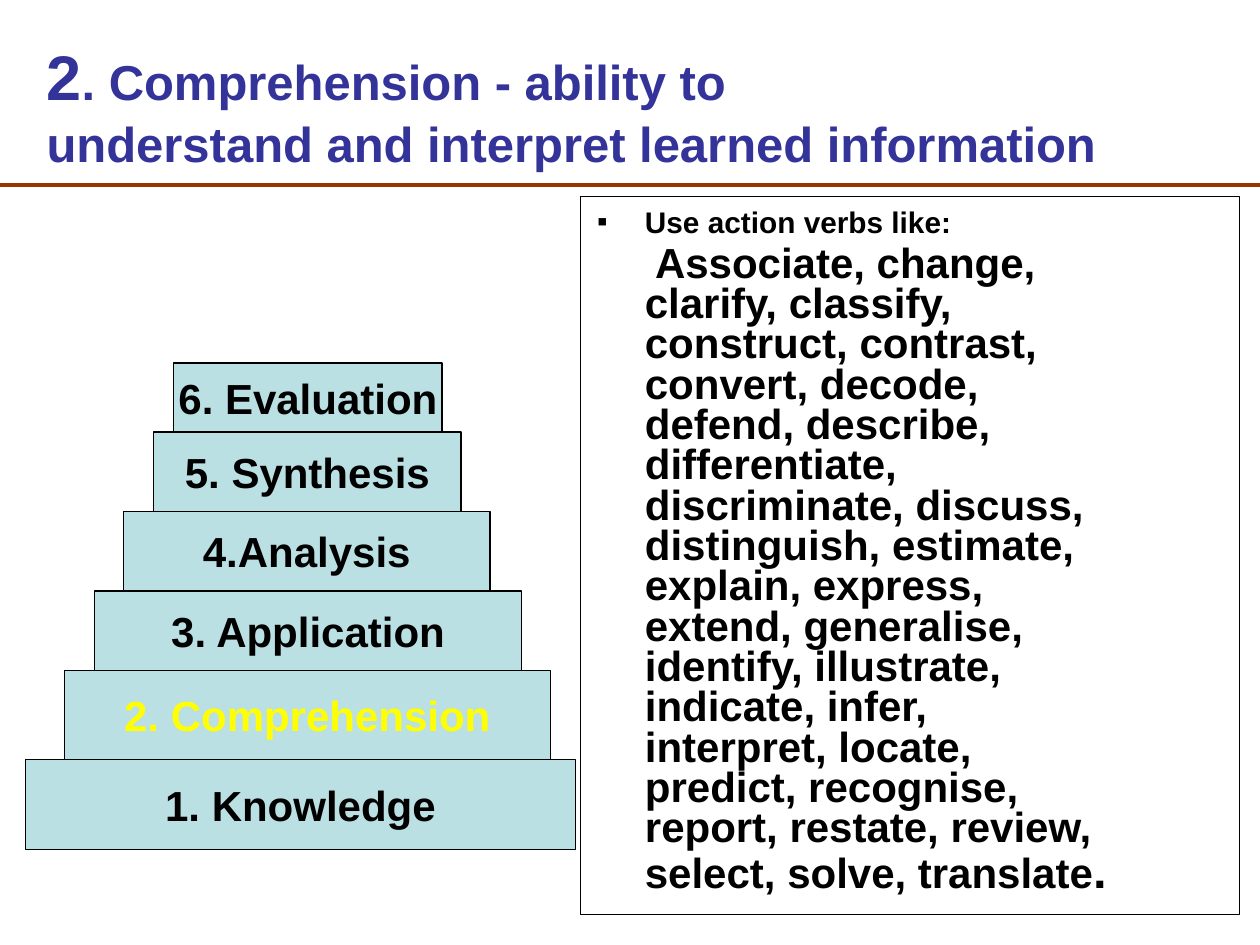
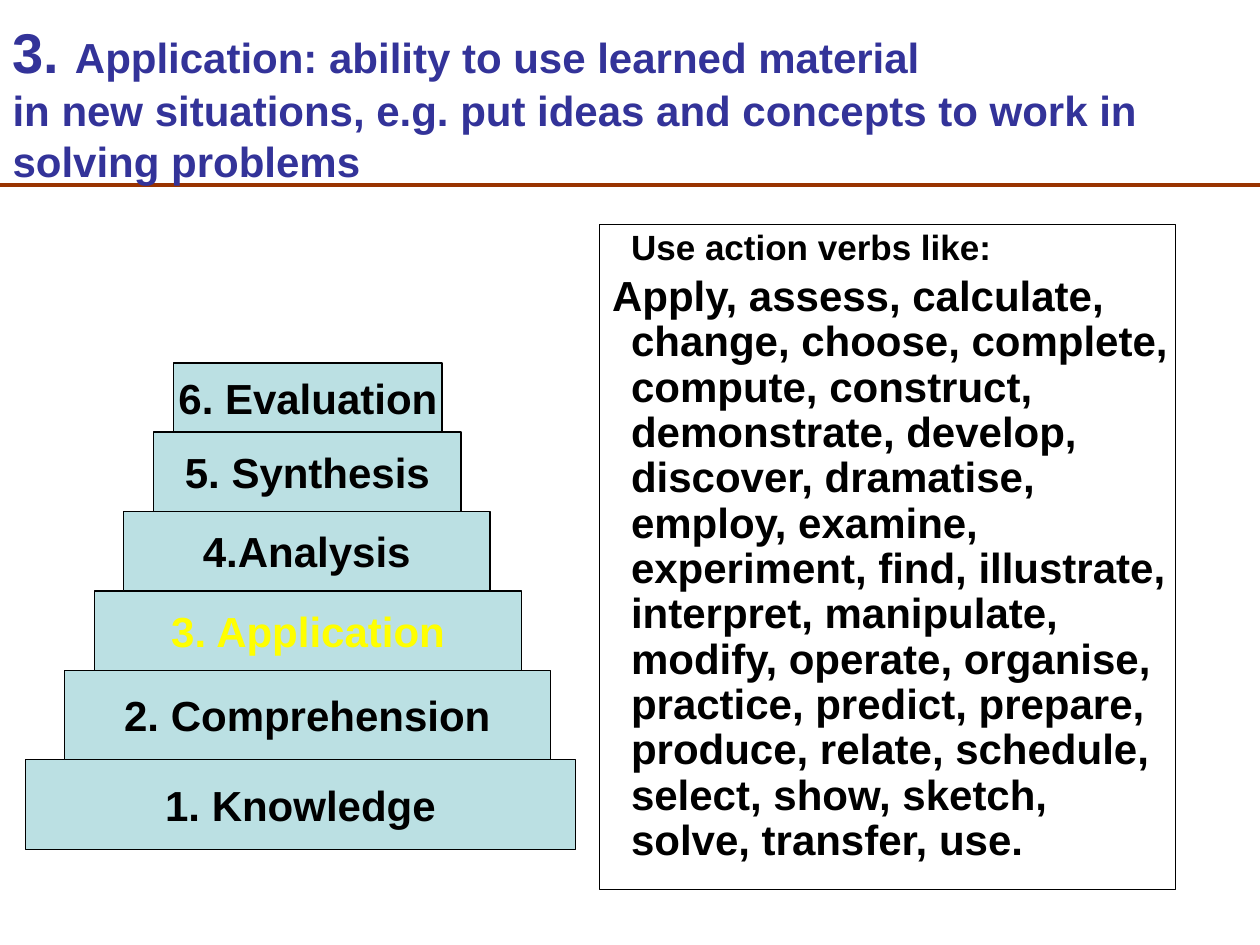
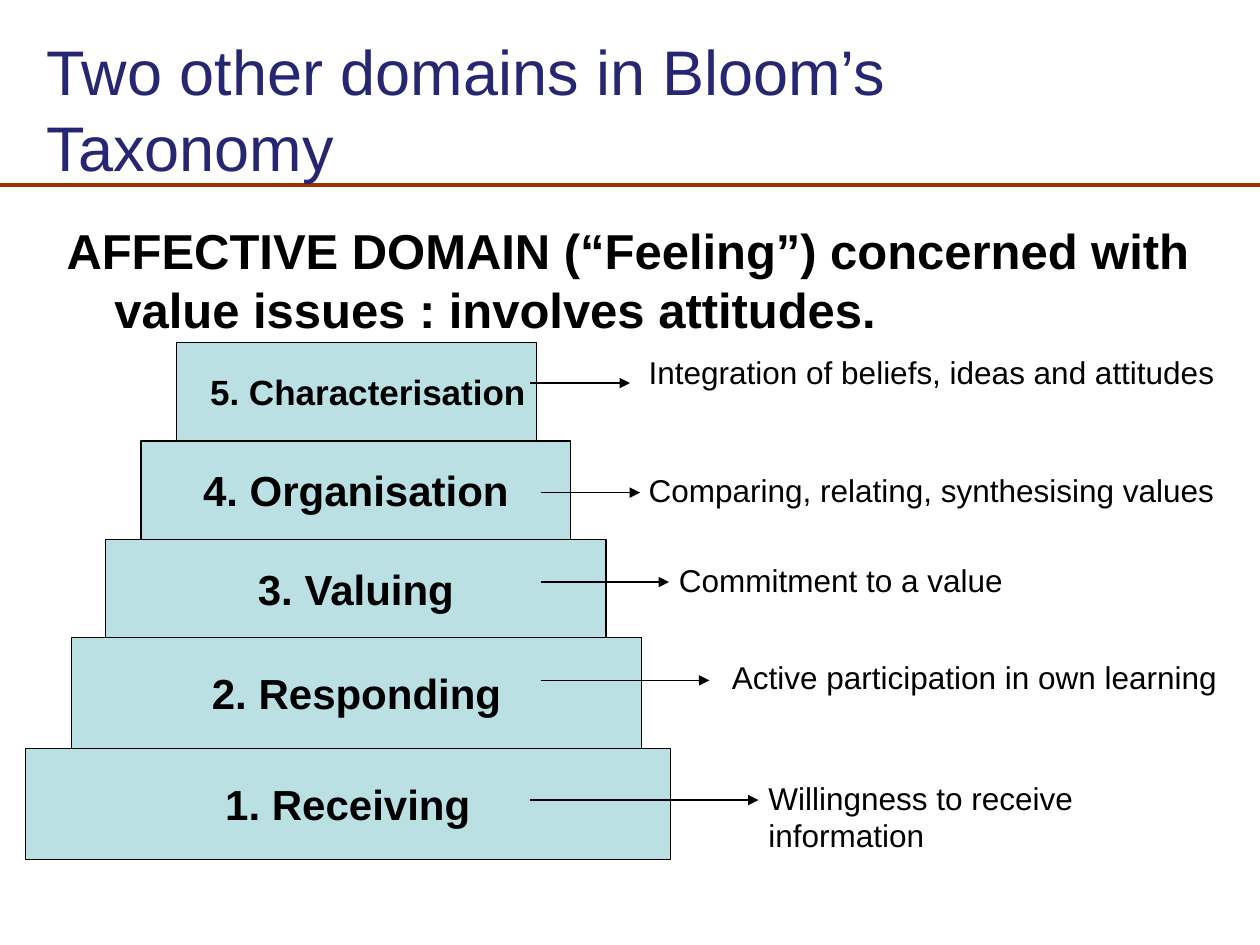
from dataclasses import dataclass

from lxml.etree import SubElement
from pptx import Presentation
from pptx.dml.color import RGBColor
from pptx.enum.shapes import MSO_CONNECTOR as CONNECTOR, MSO_SHAPE as SHAPE
from pptx.enum.text import MSO_ANCHOR as ANCHOR, MSO_AUTO_SIZE as AUTO_SIZE, PP_ALIGN as ALIGN
from pptx.oxml.ns import qn
from pptx.util import Inches, Pt


@dataclass(frozen=True)
class Theme:
    font: str = "Arial"
    ink: str = "000000"
    title: str = "333399"
    plain_title: str = "262673"
    rule: str = "993300"
    step: str = "BBE0E3"
    active: str = "FFFF00"
    thin: float = 0.75
    thick: float = 2.25
    step_size: int = 24
    label_size: int = 18
    verb_size: int = 24
    gap: int = 4


THEME = Theme()
RULE_TOP = 1.47

COGNITIVE_BOTTOM = 6.74
COGNITIVE_STEPS = [
    ("1. Knowledge", 0.2, 4.37, 0.71),
    ("2. Comprehension", 0.51, 3.86, 0.71),
    ("3. Application", 0.75, 3.39, 0.63),
    ("4.Analysis", 0.98, 2.91, 0.63),
    ("5. Synthesis", 1.22, 2.44, 0.63),
    ("6. Evaluation", 1.38, 2.13, 0.55),
]

VERB_SLIDES = [
    dict(
        title=[[("2", 36), (". Comprehension - ability to\vunderstand and interpret learned information", 28)]],
        title_at=(0.27, 0.21, 9, 1.25),
        active="2. Comprehension",
        frame=(4.61, 1.56, 5.23, 5.7),
        verbs_at=(4.64, 1.62, 4.29, 4.57),
        spacing=0.8,
        heading_size=17,
        heading_indent=-0.38,
        bullet="▪",
        verbs_indent=0.08,
        verbs=[
            ("Associate, change, clarify, classify, construct, contrast, convert, decode, defend, "
             "describe, differentiate, discriminate, discuss, distinguish, estimate, explain, "
             "express, extend, generalise, identify, illustrate, indicate, infer, interpret, "
             "locate, predict, recognise, report, restate, review, select, solve, translate",
             THEME.verb_size),
            (".", 28),
        ],
    ),
    dict(
        title=[[("3. ", 32), ("Application: ability to use learned material\vin new situations, e.g. "
                              "put ideas and concepts to work in solving problems", 24)]],
        title_at=(0, 0, 9.77, 1.61),
        active="3. Application",
        frame=(4.76, 1.78, 4.57, 5.28),
        verbs_at=(4.53, 1.78, 4.88, 4.96),
        spacing=0.9,
        heading_size=20,
        heading_indent=0,
        bullet=None,
        verbs_indent=-0.15,
        verbs=[
            ("Apply, assess, calculate, change, choose, complete, compute, construct, "
             "demonstrate, develop, discover, dramatise, employ, examine, experiment, find, "
             "illustrate, interpret, manipulate, modify, operate, organise, practice, predict, "
             "prepare, produce, relate, schedule, select, show, sketch, solve, transfer, use.",
             THEME.verb_size),
        ],
    ),
]

AFFECTIVE_TITLE = [[("Two other domains in Bloom’s", 36)], [("Taxonomy", 36)]]
AFFECTIVE_INTRO = "AFFECTIVE DOMAIN (“Feeling”) concerned with value issues : involves attitudes."
AFFECTIVE_BOTTOM = 6.82
AFFECTIVE_STEPS = [
    ("1. Receiving", 0.2, 5.12, 0.88),
    ("2. Responding", 0.57, 4.52, 0.88),
    ("3. Valuing", 0.84, 3.97, 0.78),
    ("4. Organisation", 1.12, 3.41, 0.78),
    ("5. Characterisation", 1.4, 2.86, 0.78),
]
STEP_FORMATS = {"5. Characterisation": dict(size=20, inset=0.28)}
MEANINGS = [
    ("Willingness to receive information", (4.21, 6.02, 6.35), (6, 6.13, 3.92)),
    ("Active participation in own learning", (4.29, 5.63, 5.4), (5.71, 5.17, 4.05)),
    ("Commitment to a value", (4.29, 5.31, 4.62), (5.29, 4.4, 2.77)),
    ("Comparing, relating, synthesising values", (4.29, 5.08, 3.91), (5.05, 3.69, 4.69)),
    ("Integration of beliefs, ideas and attitudes", (4.21, 5, 3.04), (5.05, 2.75, 4.69)),
]


def color(code):
    return RGBColor.from_string(code)


def inches(*lengths):
    return [Inches(length) for length in lengths]


def write(para, spans, ink=THEME.ink, bold=False, align=ALIGN.LEFT, left=0, indent=0,
          spacing=None, before=0, bullet=None):
    props = para._p.get_or_add_pPr()
    props.set("marL", str(Inches(left)))
    props.set("indent", str(Inches(indent)))
    if bullet:
        SubElement(props, qn("a:buFont"), typeface=THEME.font)
        SubElement(props, qn("a:buChar"), char=bullet)
    else:
        SubElement(props, qn("a:buNone"))
    para.alignment = align
    para.space_before = Pt(before)
    if spacing:
        para.line_spacing = spacing
    for text, size in spans:
        for number, line in enumerate(text.split("\v")):
            if number:
                para.add_line_break()
            span = para.add_run()
            span.text = line
            span.font.name = THEME.font
            span.font.size = Pt(size)
            span.font.bold = bold
            span.font.color.rgb = color(ink)


def add_text(page, at, spans, wrap=True, **style):
    box = page.shapes.add_textbox(*inches(*at))
    box.text_frame.word_wrap = wrap
    write(box.text_frame.paragraphs[0], spans, **style)
    return box


def add_line(page, start, end, ink=THEME.ink, width=THEME.thin, arrow=False):
    line = page.shapes.add_connector(CONNECTOR.STRAIGHT, *inches(*start, *end))
    line.line.color.rgb = color(ink)
    line.line.width = Pt(width)
    if arrow:
        SubElement(line.line._get_or_add_ln(), qn("a:tailEnd"), type="triangle")
    SubElement(line._element.spPr, qn("a:effectLst"))
    return line


def add_box(page, at, fill=None):
    box = page.shapes.add_shape(SHAPE.RECTANGLE, *inches(*at))
    box.shadow.inherit = False
    if fill:
        box.fill.solid()
        box.fill.fore_color.rgb = color(fill)
    else:
        box.fill.background()
    box.line.color.rgb = color(THEME.ink)
    box.line.width = Pt(THEME.thin)
    return box


def add_page(deck, title, at, anchor=ANCHOR.MIDDLE, **style):
    page = deck.slides.add_slide(deck.slide_layouts[5])
    box = page.shapes.title
    box.left, box.top, box.width, box.height = inches(*at)
    frame = box.text_frame
    frame.auto_size = AUTO_SIZE.NONE
    frame.word_wrap = True
    frame.vertical_anchor = anchor
    for number, spans in enumerate(title):
        para = frame.add_paragraph() if number else frame.paragraphs[0]
        write(para, spans, **style)
    rule = add_line(page, (0, RULE_TOP), (10, RULE_TOP), THEME.rule, THEME.thick)
    box._element.addprevious(rule._element)
    return page


def add_tower(page, steps, bottom, active=None):
    top = bottom
    for label, left, width, height in steps:
        top -= height
        form = STEP_FORMATS.get(label, {})
        frame = add_box(page, (left, top, width, height), THEME.step).text_frame
        frame.word_wrap = False
        frame.vertical_anchor = ANCHOR.MIDDLE
        frame.margin_left = Inches(form.get("inset", 0.1))
        write(frame.paragraphs[0], [(label, form.get("size", THEME.step_size))], bold=True,
              align=ALIGN.CENTER, ink=THEME.active if label == active else THEME.ink)


def add_verb_page(deck, item):
    page = add_page(deck, item["title"], item["title_at"], ink=THEME.title, bold=True)
    shared = dict(bold=True, left=0.38, spacing=item["spacing"])
    box = add_text(page, item["verbs_at"], [("Use action verbs like:", item["heading_size"])],
                   indent=item["heading_indent"], bullet=item["bullet"], **shared)
    write(box.text_frame.add_paragraph(), item["verbs"], indent=item["verbs_indent"],
          before=THEME.gap, **shared)
    add_box(page, item["frame"])
    add_tower(page, COGNITIVE_STEPS, COGNITIVE_BOTTOM, item["active"])


def add_affective_page(deck):
    page = add_page(deck, AFFECTIVE_TITLE, (0.27, 0.21, 9.45, 1.31), ANCHOR.TOP,
                    ink=THEME.plain_title)
    add_text(page, (0.43, 1.7, 9.14, 0.79), [(AFFECTIVE_INTRO, 28)], bold=True,
             left=0.38, indent=-0.38)
    add_tower(page, AFFECTIVE_STEPS, AFFECTIVE_BOTTOM)
    for meaning, (start, end, level), place in MEANINGS:
        add_line(page, (start, level), (end, level), arrow=True)
        add_text(page, (*place, 0.4), [(meaning, THEME.label_size)], wrap=False)


def main():
    deck = Presentation()
    deck.slide_width, deck.slide_height = inches(10, 7.5)
    for item in VERB_SLIDES:
        add_verb_page(deck, item)
    add_affective_page(deck)
    deck.save("out.pptx")


if __name__ == "__main__":
    main()
